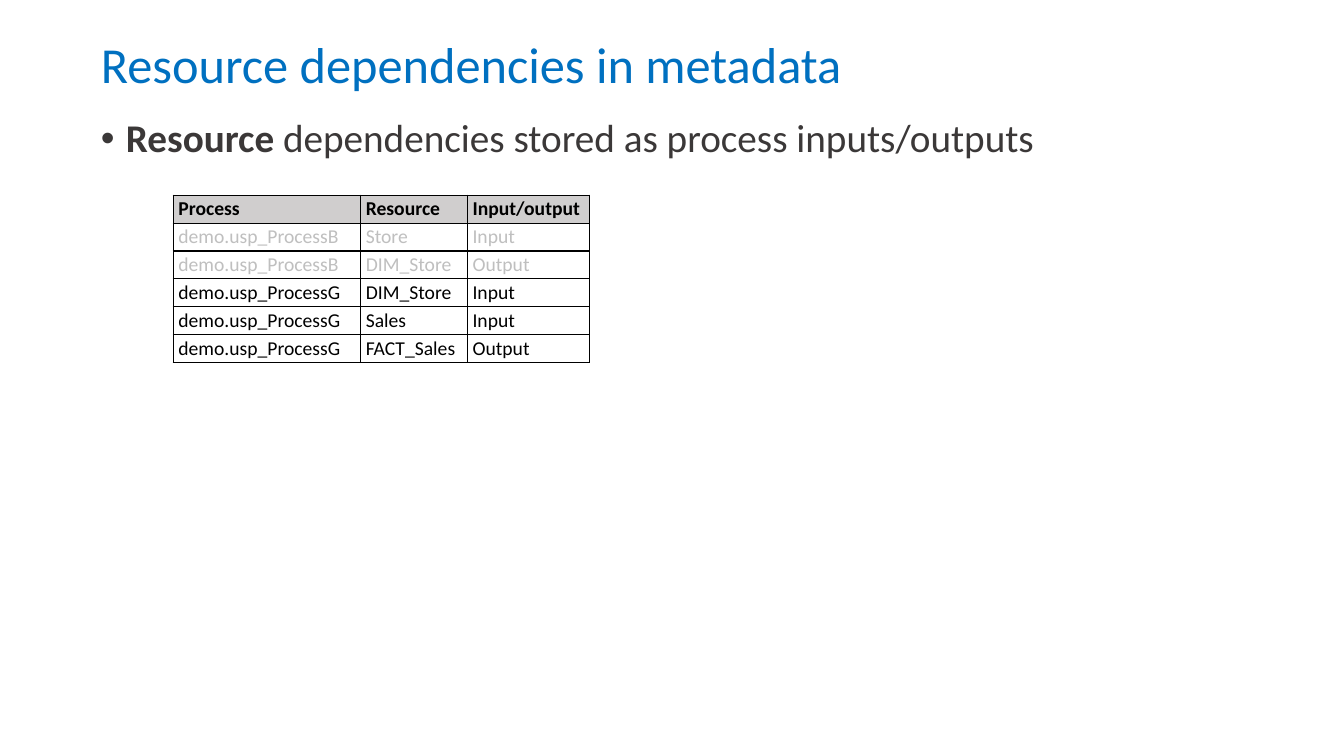
from lxml import etree
from pptx import Presentation
from pptx.dml.color import RGBColor
from pptx.enum import text
from pptx.oxml import ns
from pptx.util import Pt

TITLE = "Resource dependencies in metadata"
BULLET = [("Resource", True), (" dependencies stored as process inputs/outputs", False)]
HEADER = ("Process", "Resource", "Input/output")
ROWS = [
    ("demo.usp_ProcessB", "Store", "Input"),
    ("demo.usp_ProcessB", "DIM_Store", "Output"),
    ("demo.usp_ProcessG", "DIM_Store", "Input"),
    ("demo.usp_ProcessG", "Sales", "Input"),
    ("demo.usp_ProcessG", "FACT_Sales", "Output"),
]
FADED_PROCESS = "demo.usp_ProcessB"

COLORS = {"title": "0070C0", "body": "3B3838", "cell": "000000",
          "faded": "BFBFBF", "header": "D0CECE", "border": "000000"}
FONT = "Calibri"
TITLE_BOX = (64.8, 25.2, 832.3, 44.6)
BODY_BOX = (64.8, 81.4, 851, 419.8)
TABLE_LEFT, TABLE_TOP = 123.8, 139.5
COLUMN_WIDTHS = (133.9, 76.3, 87.1)
ROW_HEIGHT = 19.9
CELL_MARGINS = {"margin_left": 3.6, "margin_right": 3.6,
                "margin_top": 1.4, "margin_bottom": 1.4}


def add_run(paragraph, words, size, color, bold=False):
    run = paragraph.add_run()
    run.text = words
    for name, value in {"name": FONT, "size": Pt(size), "bold": bold}.items():
        setattr(run.font, name, value)
    run.font.color.rgb = RGBColor.from_string(COLORS[color])


def prepare_placeholder(shape, box):
    """Place and format a placeholder; return its first paragraph."""
    for name, value in zip(("left", "top", "width", "height"), box):
        setattr(shape, name, Pt(value))
    frame = shape.text_frame
    frame.auto_size = text.MSO_AUTO_SIZE.NONE
    frame.vertical_anchor = text.MSO_ANCHOR.TOP
    paragraph = frame.paragraphs[0]
    formats = {"alignment": text.PP_ALIGN.LEFT, "line_spacing": 0.9,
               "space_before": Pt(10)}
    for name, value in formats.items():
        setattr(paragraph, name, value)
    return paragraph


def add_borders(cell):
    properties = cell._tc.get_or_add_tcPr()
    for position, side in enumerate(("lnL", "lnR", "lnT", "lnB")):
        line = etree.Element(ns.qn("a:" + side), w=str(Pt(1)))
        fill = etree.SubElement(line, ns.qn("a:solidFill"))
        etree.SubElement(fill, ns.qn("a:srgbClr"), val=COLORS["border"])
        properties.insert(position, line)


def format_cell(cell, words, is_header, is_faded):
    for name, value in CELL_MARGINS.items():
        setattr(cell, name, Pt(value))
    if is_header:
        cell.fill.solid()
        cell.fill.fore_color.rgb = RGBColor.from_string(COLORS["header"])
    else:
        cell.fill.background()
    add_borders(cell)
    add_run(cell.text_frame.paragraphs[0], words, 14,
            "faded" if is_faded else "cell", is_header)


def add_dependency_table(slide):
    records = [HEADER] + ROWS
    table = slide.shapes.add_table(
        len(records), len(HEADER), Pt(TABLE_LEFT), Pt(TABLE_TOP),
        Pt(sum(COLUMN_WIDTHS)), Pt(ROW_HEIGHT * len(records))).table
    table.first_row = table.horz_banding = False
    for column, width in zip(table.columns, COLUMN_WIDTHS):
        column.width = Pt(width)
    for index, record in enumerate(records):
        table.rows[index].height = Pt(ROW_HEIGHT)
        for position, words in enumerate(record):
            format_cell(table.cell(index, position), words,
                        index == 0, record[0] == FADED_PROCESS)


def main():
    presentation = Presentation()
    presentation.slide_width, presentation.slide_height = Pt(960), Pt(540)
    slide = presentation.slides.add_slide(presentation.slide_layouts[1])

    heading = prepare_placeholder(slide.shapes.title, TITLE_BOX)
    add_run(heading, TITLE, 36, "title")

    bullet = prepare_placeholder(slide.placeholders[1], BODY_BOX)
    indents = bullet._p.get_or_add_pPr()
    indents.set("marL", str(Pt(18)))
    indents.set("indent", str(Pt(-18)))
    for words, bold in BULLET:
        add_run(bullet, words, 28, "body", bold)

    add_dependency_table(slide)
    presentation.save("out.pptx")


if __name__ == "__main__":
    main()
